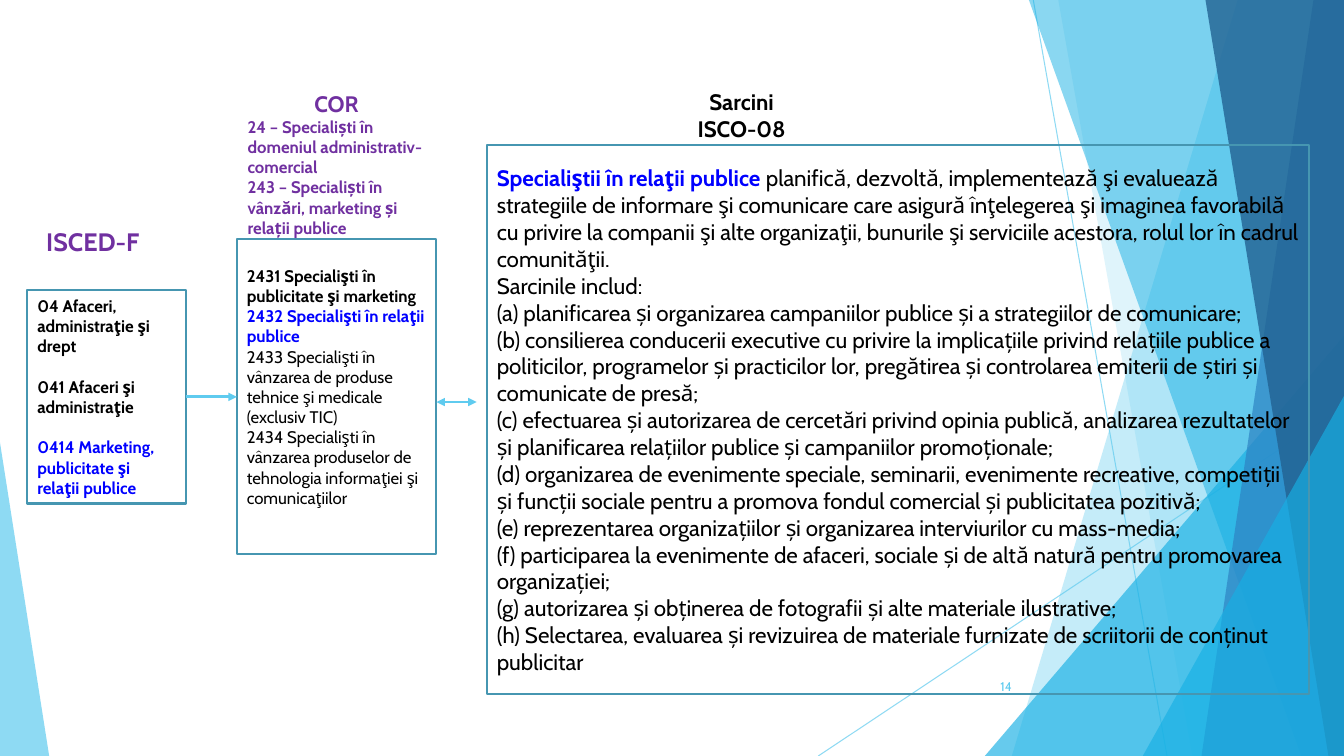
"""Build the slide linking ISCED-F fields, COR occupations and ISCO-08 tasks."""
from dataclasses import dataclass
from typing import Optional, Union

import lxml.etree
import pptx
import pptx.dml.color
import pptx.enum.shapes
import pptx.enum.text
import pptx.oxml.ns
import pptx.util

Cm = pptx.util.Cm
Pt = pptx.util.Pt
qn = pptx.oxml.ns.qn
ALIGN = pptx.enum.text.PP_ALIGN
SHAPE = pptx.enum.shapes.MSO_SHAPE

WIDTH, HEIGHT = 33.87, 19.05
FONT = "Cabin"
COLORS = {
    "black": "000000", "white": "FFFFFF", "blue": "0000FF", "purple": "7030A0",
    "frame": "4696B1", "sky": "5FCBEF", "cyan": "17B0E4", "steel": "2E83C3",
    "navy": "226292",
}


@dataclass(frozen=True)
class Panel:
    """A band from a slanted left edge to the right side of the page."""
    top_left: float
    bottom_left: float
    color: str
    opacity: int


@dataclass(frozen=True)
class Wedge:
    """A right triangle with its peak at the left (0) or right (1)."""
    left: float
    top: float
    width: float
    height: float
    peak: float
    color: str
    opacity: int


@dataclass(frozen=True)
class Line:
    """A paragraph with an optional plain black ending."""
    text: str
    size: int = 12
    color: str = "black"
    bold: bool = False
    align: ALIGN = ALIGN.LEFT
    gap: float = 0
    ending: str = ""


@dataclass(frozen=True)
class Block:
    """A rectangle or text box holding paragraphs."""
    left: float
    top: float
    width: float
    height: float
    lines: list[Line]
    border: Optional[str] = None
    fill: Optional[str] = None
    bottom_inset: float = 0.13


@dataclass(frozen=True)
class Stroke:
    """A straight connector."""
    start: tuple[float, float]
    end: tuple[float, float]
    width: float
    opacity: int = 100
    arrows: tuple[str, ...] = ()


RAYS = [
    Stroke((26.04, 0), (29.41, HEIGHT), 0.75, 70),
    Stroke((WIDTH, 10.24), (20.62, HEIGHT), 0.75, 70),
]
FACETS = [
    Panel(31.19, 25.5, "sky", 36),
    Panel(26.67, 30.05, "sky", 20),
    Wedge(24.82, 8.46, 9.05, 10.59, 1, "cyan", 66),
    Panel(25.93, 32.79, "cyan", 50),
    Panel(33.1, 30.28, "steel", 70),
    Panel(30.38, 33.48, "navy", 80),
    Wedge(28.8, 9.98, 5.07, 9.07, 1, "cyan", 66),
    Wedge(0, 11.15, 1.24, 7.9, 0, "sky", 70),
]
TASKS = [
    "Sarcinile includ:",
    "(a) planificarea și organizarea campaniilor publice și a strategiilor de comunicare;",
    "(b) consilierea conducerii executive cu privire la implicațiile privind relațiile publice a politicilor, "
    "programelor și practicilor lor, pregătirea și controlarea emiterii de știri și comunicate de presă;",
    "(c) efectuarea și autorizarea de cercetări privind opinia publică, analizarea rezultatelor și planificarea "
    "relațiilor publice și campaniilor promoționale;",
    "(d) organizarea de evenimente speciale, seminarii, evenimente recreative, competiții și funcții sociale "
    "pentru a promova fondul comercial și publicitatea pozitivă;",
    "(e) reprezentarea organizațiilor și organizarea interviurilor cu mass-media;",
    "(f) participarea la evenimente de afaceri, sociale și de altă natură pentru promovarea organizației;",
    "(g) autorizarea și obținerea de fotografii și alte materiale ilustrative;",
    "(h) Selectarea, evaluarea și revizuirea de materiale furnizate de scriitorii de conținut publicitar",
]
PAGE_NUMBER = Block(23.85, 16.79, 1.9, 1.02, [Line("14", 9, "sky", align=ALIGN.RIGHT)])
ISCED = Block(0.69, 7.31, 3.99, 5.38, [
    Line("04 Afaceri, administraţie şi drept", bold=True),
    Line("041 Afaceri şi administraţie", bold=True, gap=14.5),
    Line("0414 Marketing, publicitate şi relaţii publice", color="blue", bold=True, gap=14.5),
], border="frame")
ISCO = Block(12.27, 3.66, 20.73, 13.84, [
    Line("Specialiştii în relaţii publice ", 16, "blue", True, ending=(
        "planifică, dezvoltă, implementează şi evaluează strategiile de informare şi comunicare care asigură "
        "înţelegerea şi imaginea favorabilă cu privire la companii şi alte organizaţii, bunurile şi serviciile "
        "acestora, rolul lor în cadrul comunităţii.")),
    *(Line(task, 16) for task in TASKS),
], border="frame")
COR = Block(5.97, 6.03, 5.03, 7.94, [
    Line("2431 Specialişti în publicitate şi marketing", bold=True),
    Line("2432 Specialişti în relaţii publice", color="blue", bold=True),
    Line("2433 Specialişti în vânzarea de produse tehnice şi medicale (exclusiv TIC)"),
    Line("2434 Specialişti în vânzarea produselor de tehnologia informaţiei şi comunicaţiilor"),
], border="frame", bottom_inset=0.64)
HEADINGS = [
    Block(0.69, 5.33, 3.3, 1.5, [Line("ISCED-F", 18, "purple", True, ALIGN.CENTER)]),
    Block(16.2, 2.16, 4.98, 1.5, [
        Line(text, 16, bold=True, align=ALIGN.CENTER) for text in ("Sarcini", "ISCO-08")
    ]),
    Block(5.99, 2.49, 4.98, 3.28, [
        Line("COR", 16, "purple", True, ALIGN.CENTER),
        Line("24 – Specialiști în domeniul administrativ-comercial", color="purple", bold=True),
        Line("243 – Specialiști în vânzări, marketing și relații publice", color="purple", bold=True),
    ], fill="white"),
]
ISCED_TO_COR = Stroke((4.68, 10), (5.97, 10), 0, arrows=("tailEnd",))
COR_TO_ISCO = Stroke((11, 10.13), (12.01, 10.13), 1, arrows=("headEnd", "tailEnd"))


def rgb(name: str) -> pptx.dml.color.RGBColor:
    """Look up a named colour."""
    return pptx.dml.color.RGBColor.from_string(COLORS[name])


def set_opacity(element: lxml.etree.ElementBase, percent: int) -> None:
    """Make the first colour inside the element partly transparent."""
    color = next(element.iter(qn("a:srgbClr")))
    lxml.etree.SubElement(color, qn("a:alpha"), val=str(percent * 1000))


def draw_stroke(page: pptx.slide.Slide, stroke: Stroke) -> pptx.shapes.connector.Connector:
    """Draw a connector with its arrowheads."""
    points = [Cm(value) for value in (*stroke.start, *stroke.end)]
    connector = page.shapes.add_connector(pptx.enum.shapes.MSO_CONNECTOR.STRAIGHT, *points)
    connector.line.color.rgb = rgb("sky")
    connector.line.width = Pt(stroke.width)
    properties = connector.element.spPr
    if stroke.opacity < 100:
        set_opacity(properties, stroke.opacity)
    for arrow in stroke.arrows:
        lxml.etree.SubElement(properties.find(qn("a:ln")), qn(f"a:{arrow}"), type="triangle")
    lxml.etree.SubElement(properties, qn("a:effectLst"))
    return connector


def draw_facet(page: pptx.slide.Slide, facet: Union[Panel, Wedge]) -> None:
    """Draw one translucent background facet."""
    if isinstance(facet, Panel):
        outline = page.shapes.build_freeform(Cm(facet.top_left), 0)
        corners = [(WIDTH, 0), (WIDTH, HEIGHT), (facet.bottom_left, HEIGHT)]
        outline.add_line_segments([(Cm(x), Cm(y)) for x, y in corners], close=True)
        shape = outline.convert_to_shape()
    else:
        place = [Cm(value) for value in (facet.left, facet.top, facet.width, facet.height)]
        shape = page.shapes.add_shape(SHAPE.ISOSCELES_TRIANGLE, *place)
        shape.adjustments[0] = facet.peak
    shape.shadow.inherit = False
    shape.line.fill.background()
    shape.fill.solid()
    shape.fill.fore_color.rgb = rgb(facet.color)
    set_opacity(shape.element.spPr, facet.opacity)


def draw_block(page: pptx.slide.Slide, block: Block) -> pptx.shapes.autoshape.Shape:
    """Draw a block and write its paragraphs."""
    place = [Cm(value) for value in (block.left, block.top, block.width, block.height)]
    if block.border or block.fill:
        box = page.shapes.add_shape(SHAPE.RECTANGLE, *place)
        box.shadow.inherit = False
    else:
        box = page.shapes.add_textbox(*place)
    box.fill.background()
    box.line.fill.background()
    if block.fill:
        box.fill.solid()
        box.fill.fore_color.rgb = rgb(block.fill)
    if block.border:
        box.line.color.rgb = rgb(block.border)
        box.line.width = Pt(1.5)
    frame = box.text_frame
    frame.word_wrap = True
    frame.vertical_anchor = pptx.enum.text.MSO_ANCHOR.MIDDLE
    frame.margin_bottom = Cm(block.bottom_inset)
    frame.text = "\n".join(line.text for line in block.lines)
    for para, line in zip(frame.paragraphs, block.lines):
        para.alignment = line.align
        if line.gap:
            para.space_before = Pt(line.gap)
        if line.ending:
            para.add_run().text = line.ending
        for index, span in enumerate(para.runs):
            span.font.name = FONT
            span.font.size = Pt(line.size)
            span.font.bold = line.bold and index == 0
            span.font.color.rgb = rgb("black" if index else line.color)
    return box


def main() -> None:
    """Build and save the deck."""
    deck = pptx.Presentation()
    deck.slide_width, deck.slide_height = Cm(WIDTH), Cm(HEIGHT)
    page = deck.slides.add_slide(deck.slide_layouts[6])
    for ray in RAYS:
        draw_stroke(page, ray)
    for facet in FACETS:
        draw_facet(page, facet)
    _, isced_box, _, cor_box = [draw_block(page, block) for block in (PAGE_NUMBER, ISCED, ISCO, COR)]
    arrow = draw_stroke(page, ISCED_TO_COR)
    arrow.begin_connect(isced_box, 3)
    arrow.end_connect(cor_box, 1)
    draw_stroke(page, COR_TO_ISCO)
    for heading in HEADINGS:
        draw_block(page, heading)
    deck.save("out.pptx")


if __name__ == "__main__":
    main()
